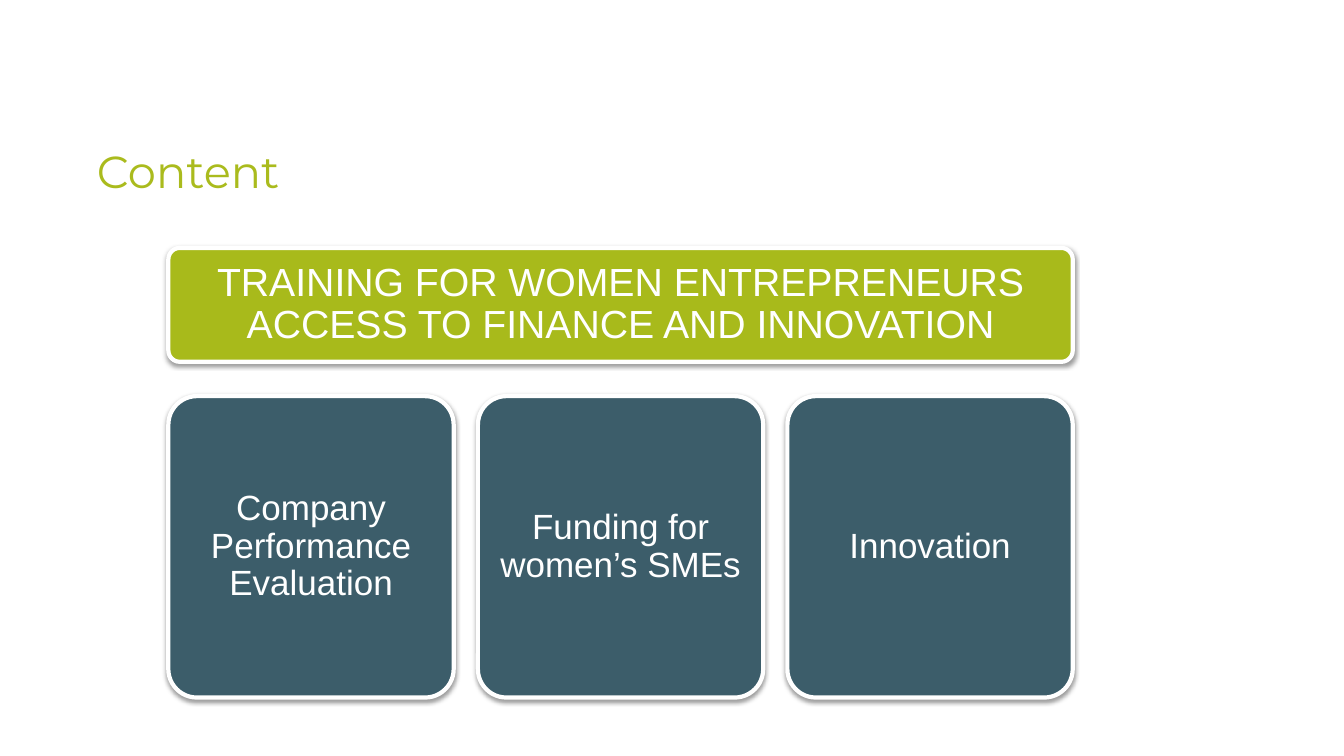
import pptx
import pptx.dml.color
import pptx.enum.shapes
import pptx.enum.text
import pptx.oxml
import pptx.oxml.ns
import pptx.util

Inches = pptx.util.Inches
Pt = pptx.util.Pt
RGBColor = pptx.dml.color.RGBColor
Align = pptx.enum.text.PP_ALIGN
Anchor = pptx.enum.text.MSO_ANCHOR

TITLE_GREEN = RGBColor(0xAA, 0xBB, 0x1D)
BANNER_GREEN = RGBColor(0xA8, 0xBA, 0x1B)
SLATE = RGBColor(0x3C, 0x5D, 0x6A)
WHITE = RGBColor(0xFF, 0xFF, 0xFF)

# Card grid, in inches
LEFT, COLUMN, GAP = 1.67, 2.83, 0.24
BANNER_TOP, BANNER_HEIGHT = 2.46, 1.13
CARD_TOP, CARD_HEIGHT = 3.93, 2.99

SHADOW = (
    f'<a:effectLst {pptx.oxml.ns.nsdecls("a")}>'
    f'<a:outerShdw blurRad="{Pt(3.1)}" dist="{Pt(1.6)}" dir="5400000" rotWithShape="0">'
    '<a:srgbClr val="000000"><a:alpha val="38000"/></a:srgbClr>'
    '</a:outerShdw></a:effectLst>'
)


def write(box, words, font, align, anchor, inset):
    frame = box.text_frame
    sides = dict.fromkeys(("margin_left", "margin_right"), Inches(inset[0]))
    sides |= dict.fromkeys(("margin_top", "margin_bottom"), Inches(inset[1]))
    settings = {"word_wrap": True, "vertical_anchor": anchor,
                "auto_size": pptx.enum.text.MSO_AUTO_SIZE.NONE, **sides}
    for name, value in settings.items():
        setattr(frame, name, value)
    para = frame.paragraphs[0]
    para.alignment, para.line_spacing = align, 0.9
    span = para.add_run()
    span.text = words
    span.font.name, size, colour = font
    span.font.size = Pt(size)
    span.font.color.rgb = colour


def add_card(page, place, fill, words, size, inset):
    card = page.shapes.add_shape(pptx.enum.shapes.MSO_SHAPE.ROUNDED_RECTANGLE,
                                 *map(Inches, place))
    card.adjustments[0] = 0.1
    card.fill.solid()
    card.fill.fore_color.rgb = fill
    card.line.color.rgb = WHITE
    card.line.width = Pt(3)
    card.shadow.inherit = False
    effects = card.element.spPr.find(pptx.oxml.ns.qn("a:effectLst"))
    card.element.spPr.replace(effects, pptx.oxml.parse_xml(SHADOW))
    write(card, words, ("Arial", size, WHITE), Align.CENTER, Anchor.MIDDLE, (inset, inset))


deck = pptx.Presentation()
deck.slide_width, deck.slide_height = Inches(13.33), Inches(7.5)
page = deck.slides.add_slide(deck.slide_layouts[5])

# Title
title = page.shapes.title
title.left, title.top, title.width, title.height = map(Inches, (0.86, 1.44, 10.93, 0.61))
write(title, "Content", ("Montserrat", 32, TITLE_GREEN), Align.LEFT, Anchor.TOP, (0.1, 0.05))

# Programme banner across all columns
modules_shown = ["Company Performance Evaluation", "Funding for women’s SMEs", "Innovation"]
count = len(modules_shown)
banner_width = count * COLUMN + (count - 1) * GAP
add_card(page, (LEFT, BANNER_TOP, banner_width, BANNER_HEIGHT), BANNER_GREEN,
         "TRAINING FOR WOMEN ENTREPRENEURS ACCESS TO FINANCE AND INNOVATION", 28, 0.12)

# One card per training module
for column, words in enumerate(modules_shown):
    left = LEFT + column * (COLUMN + GAP)
    add_card(page, (left, CARD_TOP, COLUMN, CARD_HEIGHT), SLATE, words, 25, 0.1)

deck.save("out.pptx")
